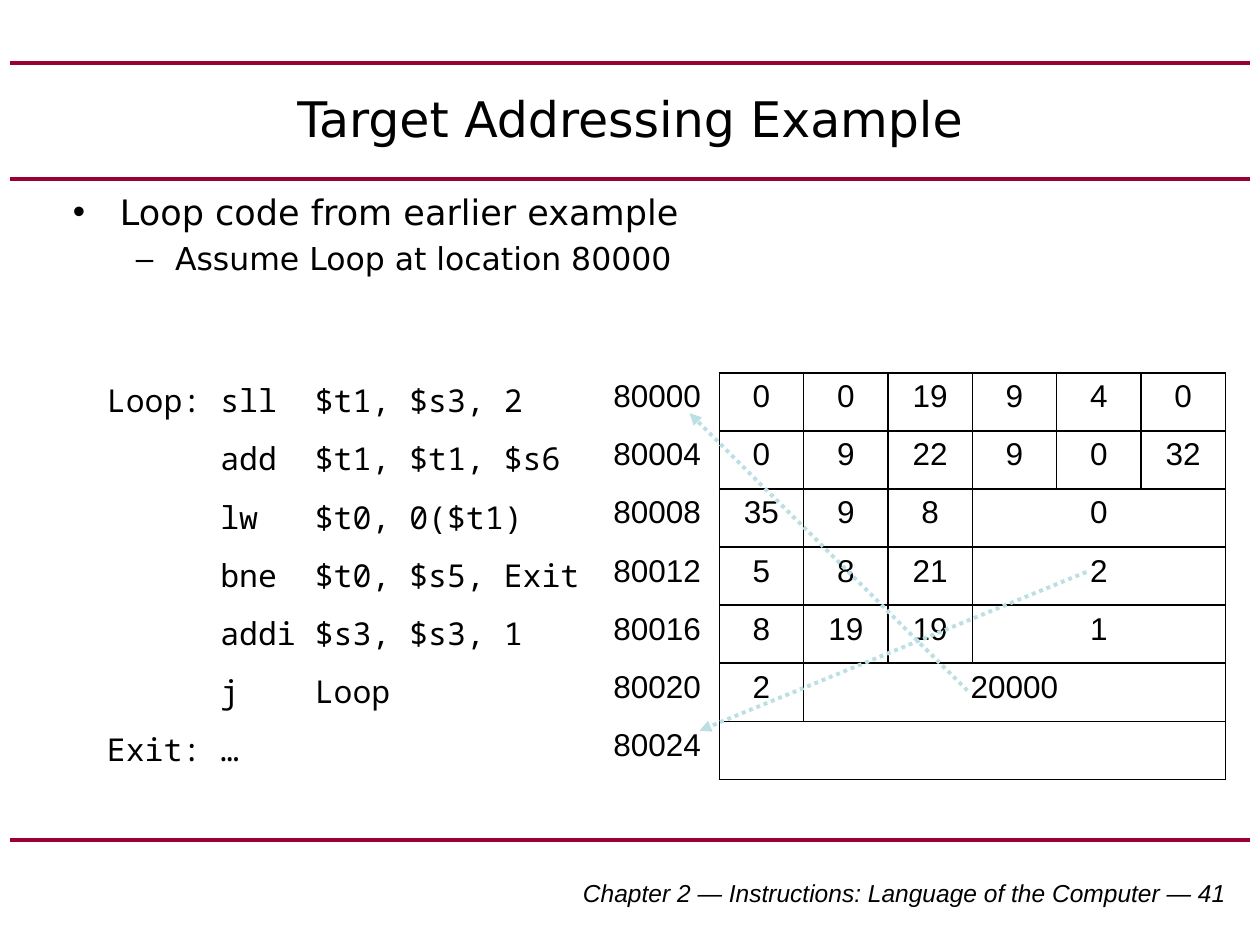
from pptx import Presentation
from pptx.dml.color import RGBColor
from pptx.enum.dml import MSO_LINE
from pptx.enum.shapes import MSO_CONNECTOR
from pptx.enum.text import MSO_ANCHOR, PP_ALIGN
from pptx.oxml import parse_xml
from pptx.oxml.ns import nsdecls
from pptx.util import Cm, Pt

BLACK = RGBColor(0x00, 0x00, 0x00)
WHITE = RGBColor(0xFF, 0xFF, 0xFF)
CRIMSON = RGBColor(0x99, 0x00, 0x33)
PALE_BLUE = RGBColor(0xBB, 0xE0, 0xE3)
SANS, HEADING, MONO = "Arial", "DejaVu Sans", "Noto Sans Mono"

FIRST_ADDRESS = 80000
COLUMN_WIDTHS = [10.21, 2.39] + [1.7] * 6
ROW_HEIGHT = 1.17
# Each instruction with its machine-code fields; the last field fills the row.
PROGRAM = [
    ("Loop: sll  $t1, $s3, 2", ["0", "0", "19", "9", "4", "0"]),
    ("      add  $t1, $t1, $s6", ["0", "9", "22", "9", "0", "32"]),
    ("      lw   $t0, 0($t1)", ["35", "9", "8", "0"]),
    ("      bne  $t0, $s5, Exit", ["5", "8", "21", "2"]),
    ("      addi $s3, $s3, 1", ["8", "19", "19", "1"]),
    ("      j    Loop", ["2", "20000"]),
    ("Exit: …", [""]),
]


def write(p, text, size=18, font=SANS, align=PP_ALIGN.LEFT, italic=False):
    p.alignment = align
    r = p.add_run()
    r.text = text
    r.font.size = Pt(size)
    r.font.name = font
    r.font.italic = italic
    r.font.color.rgb = BLACK


def set_bullet(p, char, left, hanging):
    pPr = p._p.get_or_add_pPr()
    pPr.set("marL", str(Cm(left)))
    pPr.set("indent", str(-Cm(hanging)))
    pPr.append(parse_xml(f'<a:buFont {nsdecls("a")} typeface="Arial"/>'))
    pPr.append(parse_xml(f'<a:buChar {nsdecls("a")} char="{char}"/>'))


def add_text_box(s, left, top, width, height, anchor=MSO_ANCHOR.TOP):
    tf = s.shapes.add_textbox(Cm(left), Cm(top), Cm(width), Cm(height)).text_frame
    tf.word_wrap = True
    tf.vertical_anchor = anchor
    return tf


def add_line(s, x1, y1, x2, y2, color):
    line = s.shapes.add_connector(
        MSO_CONNECTOR.STRAIGHT, Cm(x1), Cm(y1), Cm(x2), Cm(y2))
    line.line.color.rgb = color
    line.line.width = Pt(2.25)
    line._element.spPr.append(parse_xml(f'<a:effectLst {nsdecls("a")}/>'))
    return line


def add_jump_arrow(s, x1, y1, x2, y2):
    arrow = add_line(s, x1, y1, x2, y2, PALE_BLUE)
    arrow.line.dash_style = MSO_LINE.ROUND_DOT
    arrow.line._get_or_add_ln().append(
        parse_xml(f'<a:tailEnd {nsdecls("a")} type="triangle"/>'))


def style_cell(cell, left, right, top, bottom):
    """Give the cell no fill and 1 pt borders in the four colours."""
    tcPr = cell._tc.get_or_add_tcPr()
    for side, color in zip("LRTB", (left, right, top, bottom)):
        tcPr.append(parse_xml(
            f'<a:ln{side} {nsdecls("a")} w="{Pt(1)}"><a:solidFill>'
            f'<a:srgbClr val="{color}"/></a:solidFill></a:ln{side}>'))
    cell.fill.background()


def add_program_table(s, left, top):
    table = s.shapes.add_table(
        len(PROGRAM), len(COLUMN_WIDTHS), Cm(left), Cm(top),
        Cm(sum(COLUMN_WIDTHS)), Cm(ROW_HEIGHT * len(PROGRAM))).table
    table.first_row = table.horz_banding = False
    for column, width in zip(table.columns, COLUMN_WIDTHS):
        column.width = Cm(width)
    last = len(COLUMN_WIDTHS) - 1
    for i, (code, fields) in enumerate(PROGRAM):
        table.rows[i].height = Cm(ROW_HEIGHT)
        for j in range(last + 1):
            outer = WHITE if j < 2 else BLACK
            right = WHITE if j == 0 else BLACK
            style_cell(table.cell(i, j), outer, right, outer, outer)
        write(table.cell(i, 0).text_frame.paragraphs[0], code, font=MONO)
        write(table.cell(i, 1).text_frame.paragraphs[0], str(FIRST_ADDRESS + 4 * i))
        end = len(fields) + 1
        if end < last:
            table.cell(i, end).merge(table.cell(i, last))
        for j, field in enumerate(fields, start=2):
            if field:
                write(table.cell(i, j).text_frame.paragraphs[0], field,
                      align=PP_ALIGN.CENTER)


def main():
    prs = Presentation()
    prs.slide_width, prs.slide_height = Cm(25.4), Cm(19.05)
    s = prs.slides.add_slide(prs.slide_layouts[6])

    for y in (1.27, 3.6, 16.93):
        add_line(s, 0.21, y, 25.19, y, CRIMSON)

    footer = add_text_box(s, 9.53, 17.58, 15.44, 0.84)
    write(footer.paragraphs[0],
          "Chapter 2 — Instructions: Language of the Computer — 41",
          size=14, align=PP_ALIGN.RIGHT, italic=True)

    title = add_text_box(s, 1.27, 1.27, 22.86, 2.2, MSO_ANCHOR.MIDDLE)
    write(title.paragraphs[0], "Target Addressing Example",
          size=28, font=HEADING, align=PP_ALIGN.CENTER)

    body = add_text_box(s, 1.22, 3.71, 22.99, 3.4)
    p = body.paragraphs[0]
    set_bullet(p, "•", 0.95, 0.95)
    write(p, "Loop code from earlier example", size=20, font=HEADING)
    p = body.add_paragraph()
    p.level = 1
    p.space_before = Pt(4)
    set_bullet(p, "–", 2.06, 0.79)
    write(p, "Assume Loop at location 80000", font=HEADING)

    add_program_table(s, 1.9, 7.52)
    add_jump_arrow(s, 19.5, 13.92, 13.9, 8.33)
    add_jump_arrow(s, 21.9, 11.53, 14.1, 14.73)

    prs.save("out.pptx")


if __name__ == "__main__":
    main()
